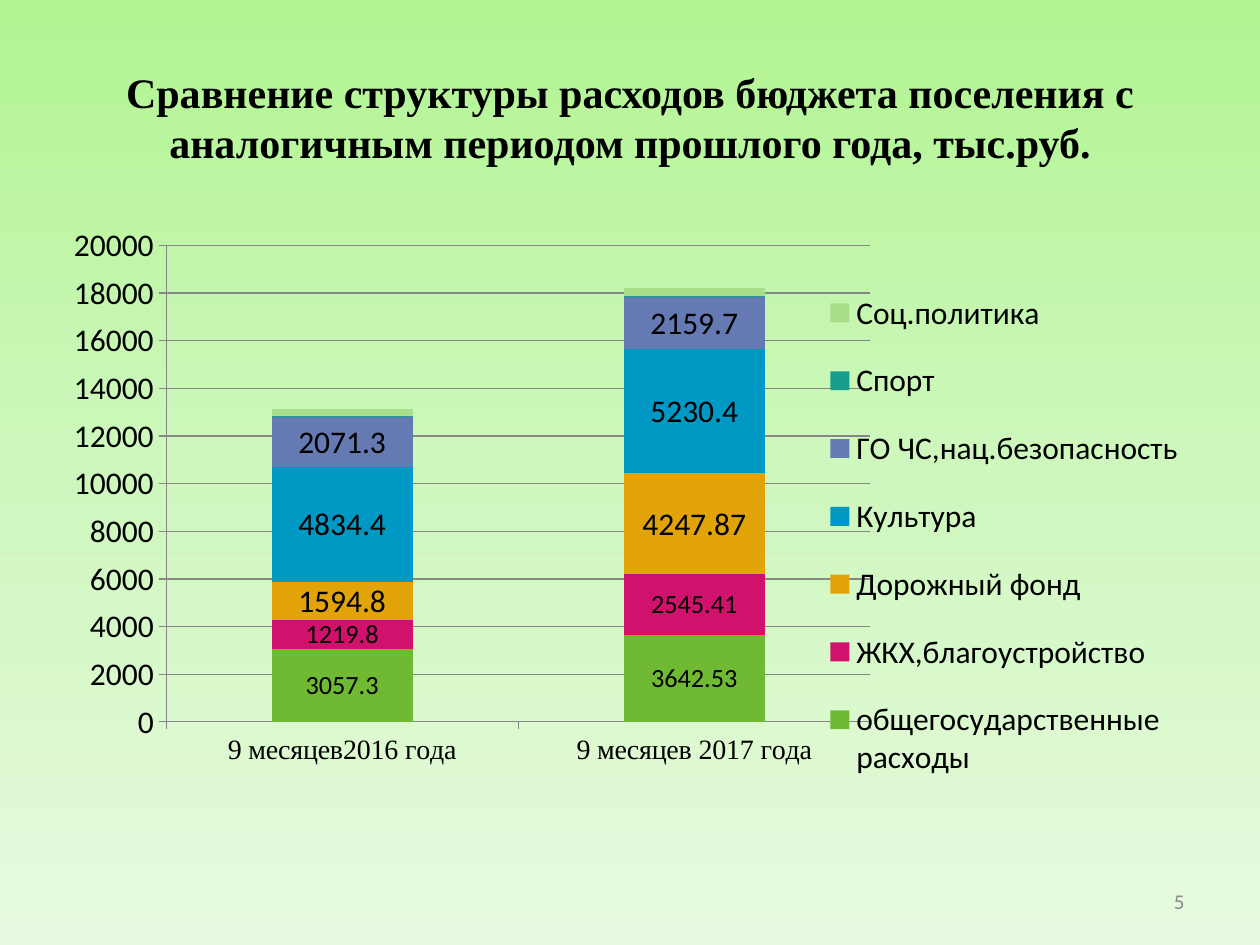
"""Build a slide comparing the structure of a settlement's budget spending over two periods."""
import pptx
import pptx.chart.data
import pptx.dml.color
import pptx.enum.chart
import pptx.enum.text
import pptx.oxml
import pptx.oxml.ns
import pptx.util

Inches, Pt = pptx.util.Inches, pptx.util.Pt
ALIGN = pptx.enum.text.PP_ALIGN
XL = pptx.enum.chart

TITLE = "Сравнение структуры расходов бюджета поселения с аналогичным периодом прошлого года, тыс.руб."
PERIODS = ["9 месяцев2016 года", "9 месяцев 2017 года"]
SPENDING = [
    ("общегосударственные расходы", (3057.3, 3642.53), "general", 15),
    ("ЖКХ,благоустройство", (1219.8, 2545.41), "housing", 15),
    ("Дорожный фонд", (1594.8, 4247.87), "roads", 18),
    ("Культура", (4834.4, 5230.4), "culture", 18),
    ("ГО ЧС,нац.безопасность", (2071.3, 2159.7), "safety", 18),
    ("Спорт", (70, 70), "sport", None),
    ("Соц.политика", (300, 300), "social", None),
]
COLORS = {
    "top": "B2F592", "middle": "CEF7BD", "bottom": "E7FADF",
    "text": "000000", "number": "898989", "line": "868686",
    "general": "70BA33", "housing": "D1126D", "roads": "E1A308", "culture": "0099C5",
    "safety": "657AB2", "sport": "179E8C", "social": "A9DE8A",
}
TEXTS = [
    (TITLE, (0.5, 0.3, 9, 1.25), ALIGN.CENTER, "text",
     {"name": "Times New Roman", "size": Pt(24), "bold": True}),
    ("5", (7.17, 6.95, 2.33, 0.4), ALIGN.RIGHT, "number", {"name": "Calibri", "size": Pt(12)}),
]
CHART_BOX = (0.5, 1.75, 9, 4.95)
PLOT_LAYOUT = {"x": 0.091, "y": 0.04, "w": 0.621, "h": 0.764}
LEGEND_LAYOUT = {"x": 0.67, "y": 0.07, "w": 0.32, "h": 0.87}


def rgb(key):
    """Return a palette colour."""
    return pptx.dml.color.RGBColor.from_string(COLORS[key])


def set_font(font, color, **values):
    """Apply a palette colour and format values to a font."""
    font.color.rgb = rgb(color)
    for name, value in values.items():
        setattr(font, name, value)


def set_background(slide):
    """Fill the slide with a vertical three-stop gradient."""
    fill = slide.background.fill
    fill.gradient()
    stops = "".join(
        f'<a:gs pos="{pos}"><a:srgbClr val="{COLORS[key]}"/></a:gs>'
        for pos, key in ((0, "top"), (50000, "middle"), (100000, "bottom")))
    grad = pptx.oxml.parse_xml(
        f'<a:gradFill {pptx.oxml.ns.nsdecls("a")} rotWithShape="1"><a:gsLst>{stops}</a:gsLst>'
        '<a:lin ang="5400000" scaled="0"/></a:gradFill>')
    old = slide.background._cSld.find(".//" + pptx.oxml.ns.qn("a:gradFill"))
    old.getparent().replace(old, grad)


def add_text(slide, text, box, align, color, values):
    """Add a vertically centred text box."""
    tf = slide.shapes.add_textbox(*map(Inches, box)).text_frame
    tf.word_wrap = True
    tf.vertical_anchor = pptx.enum.text.MSO_ANCHOR.MIDDLE
    p = tf.paragraphs[0]
    p.alignment = align
    r = p.add_run()
    r.text = text
    set_font(r.font, color, **values)


def set_layout(parent, after, values, inner=False):
    """Place a chart part by fractions of the chart area."""
    for old in parent.findall(pptx.oxml.ns.qn("c:layout")):
        parent.remove(old)
    target = '<c:layoutTarget val="inner"/>' if inner else ""
    modes = "".join(f'<c:{k}Mode val="edge"/>' for k in "xy")
    sizes = "".join(f'<c:{k} val="{v}"/>' for k, v in values.items())
    layout = pptx.oxml.parse_xml(
        f'<c:layout {pptx.oxml.ns.nsdecls("c")}><c:manualLayout>{target}{modes}{sizes}'
        '</c:manualLayout></c:layout>')
    index = 0 if after is None else parent.index(parent.find(pptx.oxml.ns.qn(after))) + 1
    parent.insert(index, layout)


def add_spending_chart(slide):
    """Add the stacked column chart."""
    data = pptx.chart.data.CategoryChartData()
    data.categories = PERIODS
    for name, values, _, _ in SPENDING:
        data.add_series(name, values)
    chart = slide.shapes.add_chart(
        XL.XL_CHART_TYPE.COLUMN_STACKED, *map(Inches, CHART_BOX), data).chart
    set_font(chart.font, "text", name="Calibri", size=Pt(18))
    chart.has_title = False
    plot = chart.plots[0]
    plot.gap_width, plot.overlap, plot.vary_by_categories = 150, 100, False
    for series, (_, _, color, size) in zip(plot.series, SPENDING):
        series.format.fill.solid()
        series.format.fill.fore_color.rgb = rgb(color)
        if size:
            labels = series.data_labels
            labels.show_value = True
            set_font(labels.font, "text", name="Calibri", size=Pt(size))

    cat, val = chart.category_axis, chart.value_axis
    val.minimum_scale, val.maximum_scale, val.major_unit = 0, 20000, 2000
    val.has_major_gridlines = True
    for axis in (cat, val):
        axis.major_tick_mark = XL.XL_TICK_MARK.OUTSIDE
    for part in (cat, val, val.major_gridlines):
        part.format.line.color.rgb = rgb("line")
        part.format.line.width = Pt(0.75)
    set_font(cat.tick_labels.font, "text", name="Times New Roman", size=Pt(16))

    chart.has_legend = True
    legend = chart.legend
    legend.position = XL.XL_LEGEND_POSITION.RIGHT
    legend.include_in_layout = False
    set_layout(plot._element.getparent(), None, PLOT_LAYOUT, inner=True)
    set_layout(legend._element, "c:legendPos", LEGEND_LAYOUT)


def main():
    """Build and save the slide."""
    prs = pptx.Presentation()
    prs.slide_width, prs.slide_height = Inches(10), Inches(7.5)
    s = prs.slides.add_slide(prs.slide_layouts[6])
    set_background(s)
    add_spending_chart(s)
    for item in TEXTS:
        add_text(s, *item)
    prs.save("out.pptx")


if __name__ == "__main__":
    main()
